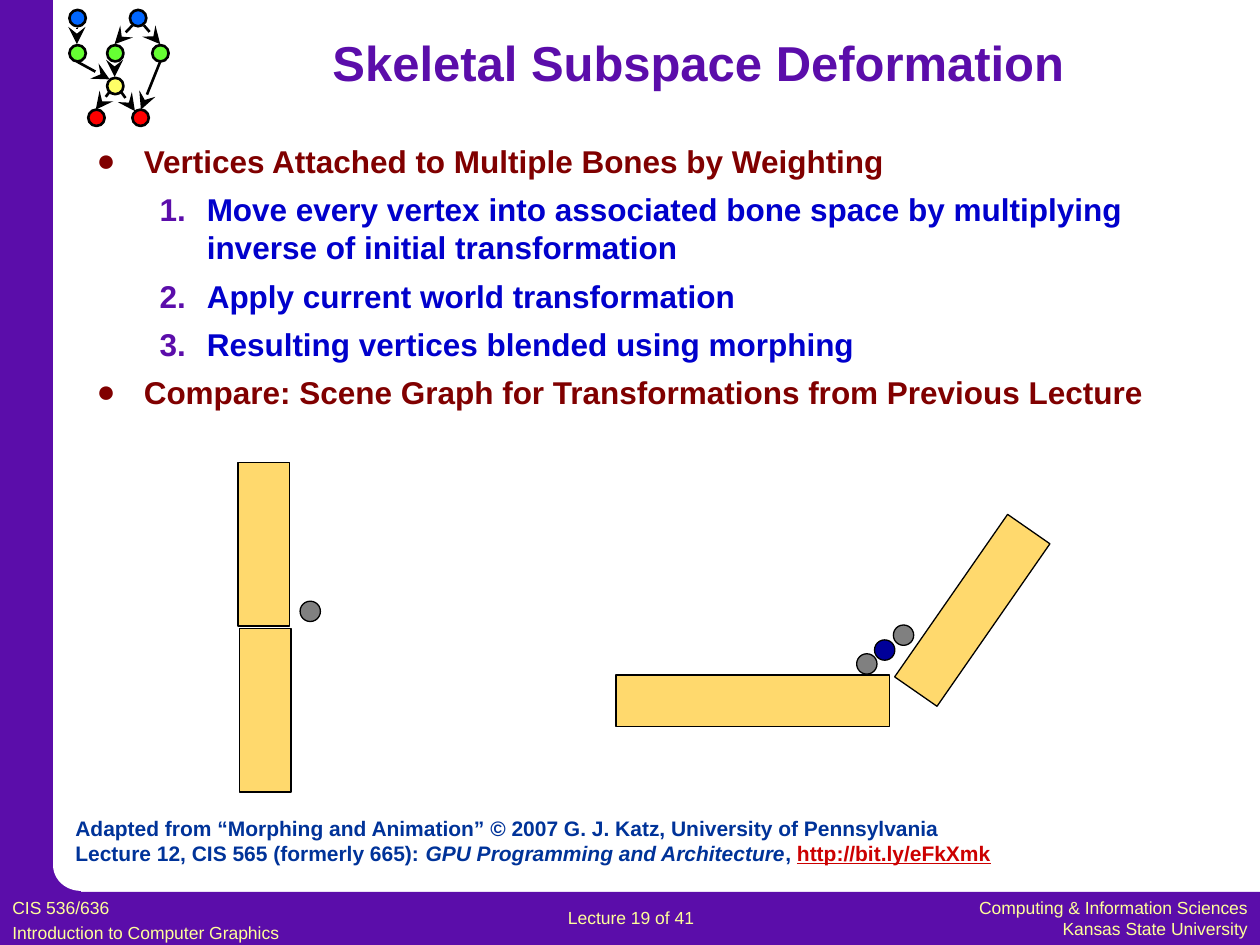
import pptx
import pptx.util
import pptx.dml.color
import pptx.enum.shapes
import pptx.enum.text
from lxml import etree

Cm, Pt = pptx.util.Cm, pptx.util.Pt
SHAPE = pptx.enum.shapes.MSO_SHAPE
ALIGN = pptx.enum.text.PP_ALIGN
ANCHOR = pptx.enum.text.MSO_ANCHOR

THEME = {
    "font": "Arial",
    "purple": "5B0DAA", "white": "FFFFFF", "black": "000000",
    "cream": "FFFF99", "maroon": "800000", "blue": "0000CC",
    "navy": "003399", "link": "CC0000",
    "bone": "FFD96D", "vertex": "808080", "blended": "000099",
    "root": "0066FF", "inner": "66FF33", "joint": "FFFF66", "leaf": "FF0000",
    "title_size": 28, "body_size": 18, "source_size": 12, "footer_size": 10,
}

# Content
TITLE = "Skeletal Subspace Deformation"
BODY = [  # level, text
    (0, "Vertices Attached to Multiple Bones by Weighting"),
    (1, "Move every vertex into associated bone space by multiplying "
        "inverse of initial transformation"),
    (1, "Apply current world transformation"),
    (1, "Resulting vertices blended using morphing"),
    (0, "Compare: Scene Graph for Transformations from Previous Lecture"),
]
SOURCE = [  # lines of (text, style)
    [("Adapted from “Morphing and Animation” © 2007 G. J. Katz, "
      "University of Pennsylvania", {})],
    [("Lecture 12, CIS 565 (formerly 665): ", {}),
     ("GPU Programming and Architecture", {"italic": True}),
     (", ", {}),
     ("http://bit.ly/eFkXmk", {"color": "link", "underline": True})],
]
FOOTERS = [  # box, alignment, space before later lines, lines
    ((18.24, 17.96, 7.16, 1.09), ALIGN.RIGHT, 0,
     ["Computing & Information Sciences", "Kansas State University"]),
    ((0, 17.96, 7.49, 1.12), ALIGN.LEFT, 2,
     ["CIS 536/636", "Introduction to Computer Graphics"]),
    ((11.2, 18.16, 3.86, 0.69), ALIGN.LEFT, 0, ["Lecture 19 of 41"]),
]

# Geometry in centimetres
FRAME = [  # shape, box, colour
    (SHAPE.RECTANGLE, (0, 17.98, 25.4, 1.07), "purple"),
    (SHAPE.RECTANGLE, (0, 0, 1.07, 19.05), "purple"),
    (SHAPE.RECTANGLE, (0.51, 17.4, 1.12, 1.12), "purple"),
    (SHAPE.OVAL, (1.07, 16.92, 1.12, 1.04), "white"),
]
NODE_SIZE, VERTEX_SIZE = 0.33, 0.41
GRAPH_ROWS = [  # top, colour, lefts
    (0.2, "root", [1.4, 2.62]),
    (0.91, "inner", [1.4, 2.16, 3.07]),
    (1.57, "joint", [2.16]),
    (2.21, "leaf", [1.78, 2.67]),
]
GRAPH_EDGES = [  # x1, y1, x2, y2
    (1.55, 0.56, 1.55, 0.89), (2.67, 0.51, 2.31, 0.89),
    (2.9, 0.51, 3.23, 0.89), (1.55, 1.24, 2.21, 1.6),
    (2.31, 1.24, 2.31, 1.55), (3.23, 1.24, 2.84, 2.21),
    (2.44, 1.85, 2.72, 2.24), (2.21, 1.85, 1.93, 2.21),
]
BONES = [  # box, rotation
    ((12.42, 13.61, 5.51, 1.04), 0),
    ((19.08, 10.31, 1.04, 3.99), 34.8),
    ((4.8, 9.32, 1.04, 3.3), 0),
    ((4.83, 12.67, 1.04, 3.3), 0),
]
VERTICES = [  # left, top, colour
    (17.27, 13.18, "vertex"), (18.01, 12.6, "vertex"),
    (17.63, 12.9, "blended"), (6.05, 12.12, "vertex"),
]


def rgb(name):
    return pptx.dml.color.RGBColor.from_string(THEME[name])


def sub(parent, tag, **attrs):
    return etree.SubElement(parent, pptx.oxml.ns.qn(tag), attrs)


def add_shape(s, kind, box, fill, line=None, rotation=0):
    sp = s.shapes.add_shape(kind, *map(Cm, box))
    sp.shadow.inherit = False
    sp.rotation = rotation
    sp.fill.solid()
    sp.fill.fore_color.rgb = rgb(fill)
    if line:
        sp.line.color.rgb = rgb("black")
        sp.line.width = Pt(line)
    else:
        sp.line.fill.background()


def add_arrow(s, x1, y1, x2, y2):
    cx = s.shapes.add_connector(pptx.enum.shapes.MSO_CONNECTOR.STRAIGHT,
                                *map(Cm, (x1, y1, x2, y2)))
    cx.line.color.rgb = rgb("black")
    cx.line.width = Pt(1.5)
    sub(cx.line._get_or_add_ln(), "a:tailEnd", type="stealth", w="lg", len="lg")
    sub(cx._element.spPr, "a:effectLst")


def add_run(p, text, size, color, bold=True, italic=False, underline=False):
    r = p.add_run()
    r.text = text
    f = r.font
    f.name, f.size, f.bold = THEME["font"], Pt(THEME[size]), bold
    f.italic, f.underline = italic, underline
    f.color.rgb = rgb(color)


def add_textbox(s, box, wrap):
    tf = s.shapes.add_textbox(*map(Cm, box)).text_frame
    tf.word_wrap = wrap
    return tf


def next_paragraph(tf, i, space=0):
    p = tf.add_paragraph() if i else tf.paragraphs[0]
    p.space_before = Pt(space if i else 0)
    return p


def add_bullet(p, level):
    pPr = p._p.get_or_add_pPr()
    pPr.set("marL", str(Cm((0.95, 2.22)[level])))
    pPr.set("indent", str(Cm(-0.95)))
    color = sub(pPr, "a:buClr")
    sub(color, "a:srgbClr", val=THEME[("maroon", "purple")[level]])
    sub(pPr, "a:buFont", typeface=THEME["font"])
    if level:
        sub(pPr, "a:buAutoNum", type="arabicPeriod")
    else:
        sub(pPr, "a:buChar", char="●")


def main():
    prs = pptx.Presentation()
    prs.slide_width, prs.slide_height = Cm(25.4), Cm(19.05)
    s = prs.slides.add_slide(prs.slide_layouts[5])

    # Purple frame with rounded inner corner
    for kind, box, fill in FRAME:
        add_shape(s, kind, box, fill)

    # Scene graph emblem
    for top, fill, lefts in GRAPH_ROWS:
        for left in lefts:
            add_shape(s, SHAPE.OVAL, (left, top, NODE_SIZE, NODE_SIZE), fill, 1.5)
    for edge in GRAPH_EDGES:
        add_arrow(s, *edge)

    # Footers
    for box, align, space, lines in FOOTERS:
        tf = add_textbox(s, box, False)
        for i, text in enumerate(lines):
            p = next_paragraph(tf, i, space)
            p.alignment = align
            add_run(p, text, "footer_size", "cream", bold=False)

    # Title
    title = s.shapes.title
    title.left, title.top, title.width, title.height = map(
        Cm, (3.18, 0.2, 21.79, 2.11))
    title.text_frame.vertical_anchor = ANCHOR.MIDDLE
    p = title.text_frame.paragraphs[0]
    p.alignment = ALIGN.CENTER
    add_run(p, TITLE, "title_size", "purple")

    # Source credit
    tf = add_textbox(s, (1.27, 16.31, 19.25, 1.27), False)
    for i, line in enumerate(SOURCE):
        p = next_paragraph(tf, i)
        for text, style in line:
            add_run(p, text, "source_size", **{"color": "navy", **style})

    # Bulleted and numbered body
    tf = add_textbox(s, (1.7, 2.74, 23.29, 12.7), True)
    for i, (level, text) in enumerate(BODY):
        p = next_paragraph(tf, i, 6)
        p.level = level
        add_bullet(p, level)
        add_run(p, text, "body_size", ("maroon", "blue")[level])

    # Bones and vertices
    for box, rotation in BONES:
        add_shape(s, SHAPE.RECTANGLE, box, "bone", 0.75, rotation)
    for left, top, fill in VERTICES:
        add_shape(s, SHAPE.OVAL, (left, top, VERTEX_SIZE, VERTEX_SIZE), fill, 0.75)

    prs.save("out.pptx")


if __name__ == "__main__":
    main()
